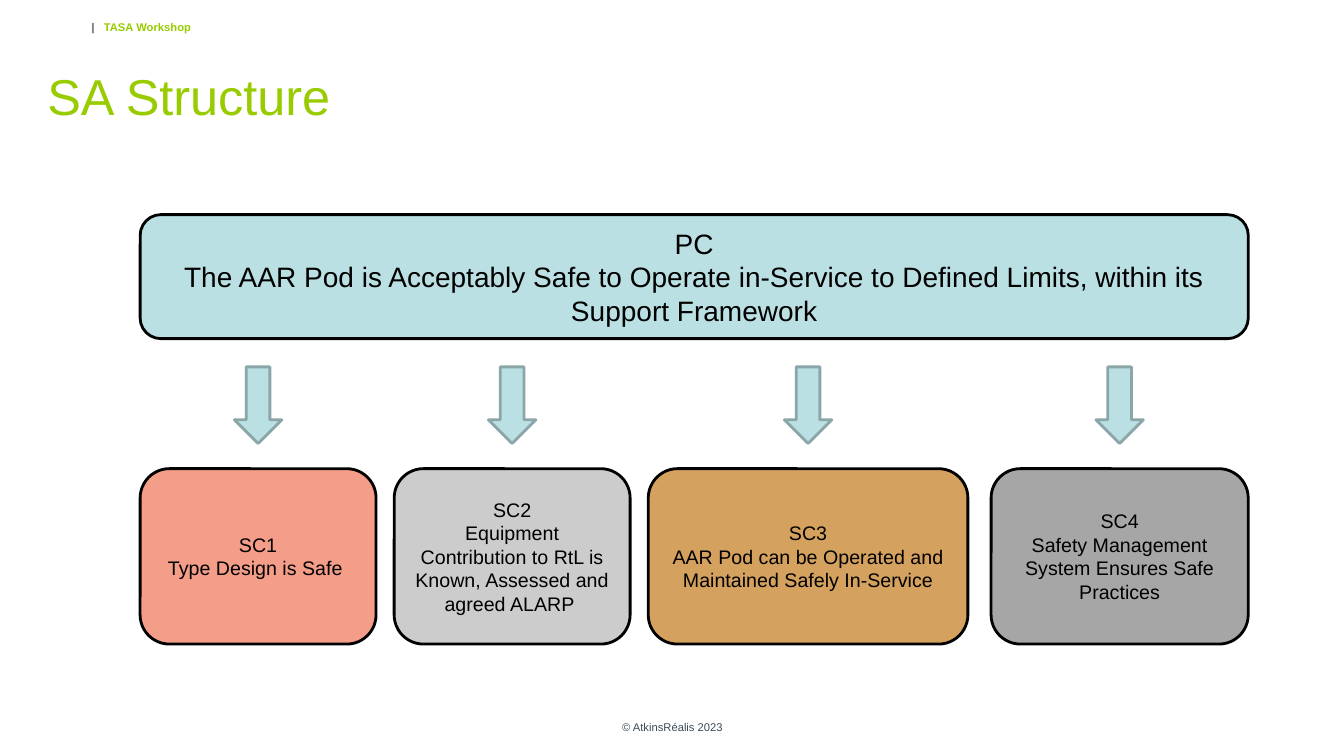
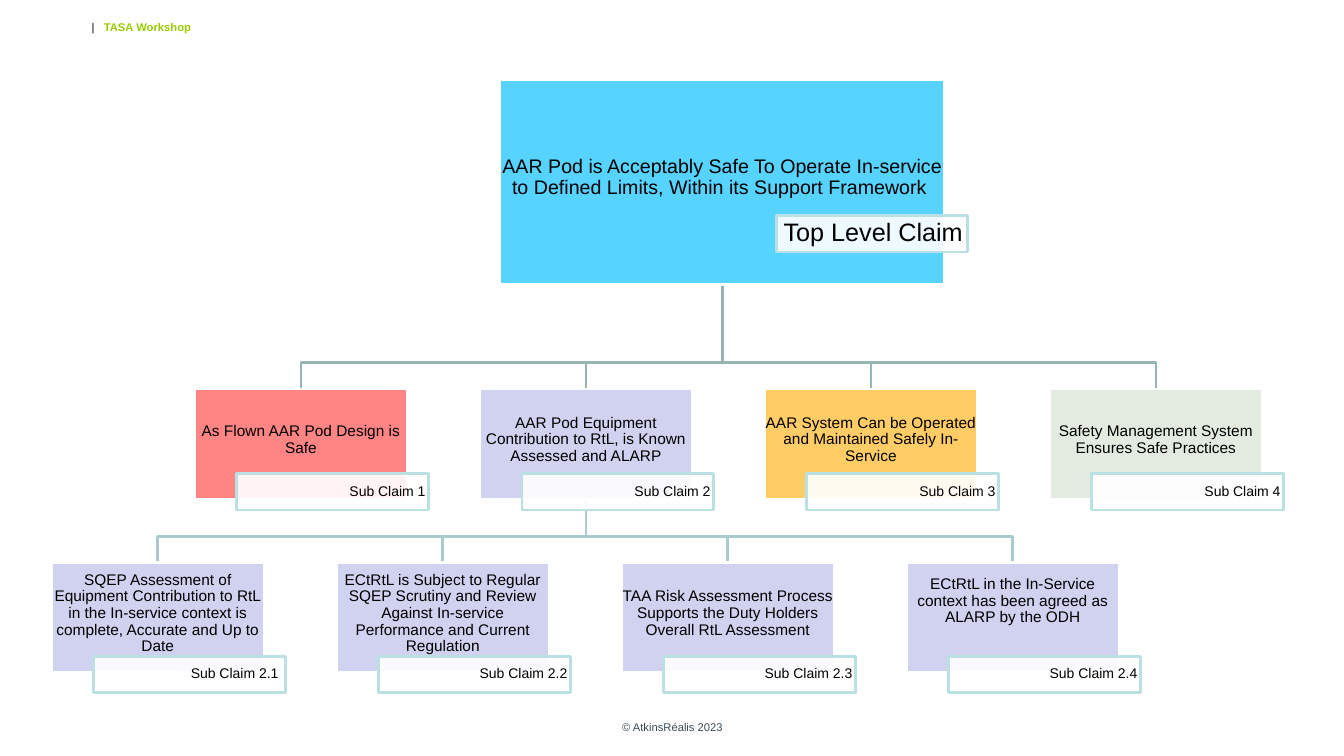
import dataclasses

import pptx
import pptx.dml.color
import pptx.enum.shapes
import pptx.enum.text
import pptx.oxml
import pptx.oxml.ns
import pptx.util

Inches = pptx.util.Inches
SHAPES = pptx.enum.shapes.MSO_SHAPE
ALIGN = pptx.enum.text.PP_ALIGN
ANCHOR = pptx.enum.text.MSO_ANCHOR


@dataclasses.dataclass(frozen=True)
class Theme:
    font: str = "Arial"
    black: str = "000000"
    white: str = "FFFFFF"
    green: str = "99CC00"
    slate: str = "394A58"
    teal: str = "BBE0E3"
    arrow_edge: str = "8AA6A8"
    upper_line: str = "96B3B6"
    lower_line: str = "AACBCE"
    salmon: str = "F49D88"
    silver: str = "CCCCCC"
    ochre: str = "D4A15E"
    grey: str = "A6A6A6"
    sky: str = "57D3FF"
    red: str = "FF8585"
    lilac: str = "D1D1F0"
    amber: str = "FFCC66"
    sage: str = "E3EBE1"
    title_size: int = 36
    claim_size: int = 20
    card_size: int = 14
    node_size: int = 11
    tag_size: int = 10
    top_tag_size: int = 18
    small_size: int = 8
    line_width: int = 2


THEME = Theme()

CARDS = [
    (1.39, 2.34, THEME.salmon, "SC1\nType Design is Safe "),
    (3.91, 2.34, THEME.silver,
     "SC2\nEquipment Contribution to RtL is Known, Assessed and agreed ALARP "),
    (6.43, 3.17, THEME.ochre,
     "SC3\nAAR Pod can be Operated and Maintained Safely In-Service"),
    (9.83, 2.55, THEME.grey,
     "SC4\nSafety Management System Ensures Safe Practices"),
]

# Fill, claim, tag and extra bottom inset of each node
SUB_CLAIMS = [
    (THEME.red, "As Flown AAR Pod Design is Safe", "Sub Claim 1", 0),
    (THEME.lilac,
     "AAR Pod Equipment Contribution to RtL, is Known Assessed and ALARP",
     "Sub Claim 2", 0),
    (THEME.amber,
     "AAR System Can be Operated and Maintained Safely In-Service",
     "Sub Claim 3", 0),
    (THEME.sage, "Safety Management System Ensures Safe Practices",
     "Sub Claim 4", 0),
]
LOWER_CLAIMS = [
    (THEME.lilac,
     "SQEP Assessment of Equipment Contribution to RtL in the In-service "
     "context is complete, Accurate and Up to Date", "Sub Claim 2.1 ", 0),
    (THEME.lilac,
     "ECtRtL is Subject to Regular SQEP Scrutiny and Review Against "
     "In-service Performance and Current Regulation", "Sub Claim 2.2", 0),
    (THEME.lilac,
     "TAA Risk Assessment Process Supports the Duty Holders Overall RtL "
     "Assessment", "Sub Claim 2.3", 0),
    (THEME.lilac,
     "ECtRtL in the In-Service context has been agreed as ALARP by the ODH",
     "Sub Claim 2.4", 0.24),
]

NODE_WIDTH, NODE_HEIGHT = 2.11, 1.09
NODE_PITCH = 8.48 / 3
TAG_WIDTH, TAG_HEIGHT = 1.9, 0.36


def rgb(color):
    return pptx.dml.color.RGBColor.from_string(color)


def style_font(font, size, color, bold=False):
    font.name = THEME.font
    font.size = pptx.util.Pt(size)
    font.bold = bold
    font.color.rgb = rgb(color)


def set_insets(frame, left, top, right, bottom):
    frame.margin_left, frame.margin_top = Inches(left), Inches(top)
    frame.margin_right, frame.margin_bottom = Inches(right), Inches(bottom)


def fill_text(frame, text, size, color=THEME.black, align=ALIGN.CENTER,
              anchor=ANCHOR.MIDDLE, spacing=1.0):
    frame.text = text
    frame.word_wrap = True
    frame.vertical_anchor = anchor
    for para in frame.paragraphs:
        para.alignment = align
        para.line_spacing = spacing
        for span in para.runs:
            style_font(span.font, size, color)


def set_outline(shape, color):
    shape.shadow.inherit = False
    shape.line.color.rgb = rgb(color)
    shape.line.width = pptx.util.Pt(THEME.line_width)


def add_box(page, kind, area, fill, edge):
    box = page.shapes.add_shape(kind, *map(Inches, area))
    set_outline(box, edge)
    box.fill.solid()
    box.fill.fore_color.rgb = rgb(fill)
    return box


def add_card(page, area, fill, text, size):
    card = add_box(page, SHAPES.ROUNDED_RECTANGLE, area, fill, THEME.black)
    fill_text(card.text_frame, text, size)


def add_title(page, text):
    title = page.shapes.title
    title.left, title.top = Inches(0.37), Inches(0.59)
    title.width, title.height = Inches(12.08), Inches(0.71)
    fill_text(title.text_frame, text, THEME.title_size, THEME.green,
              ALIGN.LEFT, ANCHOR.BOTTOM)


def add_node(page, area, fill, text, size, lift=0):
    """Add a claim box; lift raises its text by widening the bottom inset."""
    node = add_box(page, SHAPES.RECTANGLE, area, fill, THEME.white)
    set_insets(node.text_frame, 0, 0.01, 0, 0.09 + lift)
    fill_text(node.text_frame, text, size, spacing=0.9)


def add_tag(page, left, top, text, size, inset):
    tag = add_box(page, SHAPES.RECTANGLE, (left, top, TAG_WIDTH, TAG_HEIGHT),
                  THEME.white, THEME.teal)
    solid = tag.element.spPr.find(pptx.oxml.ns.qn("a:solidFill"))
    solid[0].append(pptx.oxml.parse_xml(
        f'<a:alpha {pptx.oxml.ns.nsdecls("a")} val="90000"/>'))
    set_insets(tag.text_frame, inset, 0.01, inset, 0.01)
    fill_text(tag.text_frame, text, size, align=ALIGN.RIGHT, spacing=0.9)


def add_branches(page, trunk, top, bus, bottom, centers, color):
    """Join a parent to each child by a line with two bends at the bus."""
    for center in centers:
        outline = page.shapes.build_freeform(Inches(trunk), Inches(top))
        bends = [(trunk, bus), (center, bus), (center, bottom)]
        outline.add_line_segments(
            [(Inches(x), Inches(y)) for x, y in bends], close=False)
        branch = outline.convert_to_shape()
        branch.fill.background()
        set_outline(branch, color)


def node_lefts(first):
    return [first + index * NODE_PITCH for index in range(4)]


def node_centers(first):
    return [left + NODE_WIDTH / 2 for left in node_lefts(first)]


def add_node_row(page, first, top, tag_top, claims):
    for left, (fill, text, tag, lift) in zip(node_lefts(first), claims):
        add_node(page, (left, top, NODE_WIDTH, NODE_HEIGHT), fill, text,
                 THEME.node_size, lift)
        add_tag(page, left + 0.42, tag_top, tag, THEME.tag_size, 0.03)


def move_to_master(deck, box):
    master = deck.slide_master
    box.element.nvSpPr.cNvPr.set("id", str(len(master.shapes) + 2))
    master.shapes.element.append(box.element)


def add_header_and_footer(deck, page):
    """Put the running header and the copyright line on the slide master."""
    header = page.shapes.add_textbox(
        Inches(0.91), Inches(0.2), Inches(10.26), Inches(0.34))
    header.text_frame.word_wrap = True
    set_insets(header.text_frame, 0, 0, 0, 0)
    para = header.text_frame.paragraphs[0]
    para._p.get_or_add_pPr().append(pptx.oxml.parse_xml(
        f'<a:tabLst {pptx.oxml.ns.nsdecls("a")}>'
        f'<a:tab pos="{Inches(0.12)}" algn="l"/></a:tabLst>'))
    for text, color, bold in (("|\t", THEME.black, False),
                              ("TASA Workshop", THEME.green, True)):
        span = para.add_run()
        span.text = text
        style_font(span.font, THEME.small_size, color, bold)

    footer = page.shapes.add_textbox(
        Inches(4.56), Inches(7.01), Inches(4.22), Inches(0.4))
    fill_text(footer.text_frame, "© AtkinsRéalis 2023", THEME.small_size,
              THEME.slate)
    for box in (header, footer):
        move_to_master(deck, box)


def build_structure(page):
    add_title(page, "SA Structure")
    add_card(page, (1.39, 2.13, 10.99, 1.23), THEME.teal,
             "PC\nThe AAR Pod is Acceptably Safe to Operate in-Service to "
             "Defined Limits, within its Support Framework", THEME.claim_size)
    arrow_width = 0.47
    for left, width, fill, text in CARDS:
        add_card(page, (left, 4.65, width, 1.74), fill, text, THEME.card_size)
        add_box(page, SHAPES.DOWN_ARROW,
                (left + (width - arrow_width) / 2, 3.64, arrow_width, 0.76),
                THEME.teal, THEME.arrow_edge)


def build_claim_tree(page):
    upper_left, upper_top = 1.93, 3.86
    lower_left, lower_top = 0.51, 5.58
    upper_centers = node_centers(upper_left)
    add_branches(page, 7.17, 2.82, 3.6, upper_top, upper_centers,
                 THEME.upper_line)
    add_branches(page, upper_centers[1], upper_top + NODE_HEIGHT, 5.32,
                 lower_top, node_centers(lower_left), THEME.lower_line)
    add_node(page, (4.96, 0.79, 4.41, 2.03), THEME.sky,
             "AAR Pod is Acceptably Safe To Operate In-service to Defined "
             "Limits, Within its Support Framework ", THEME.card_size)
    add_tag(page, 7.7, 2.14, "Top Level Claim", THEME.top_tag_size, 0.05)
    add_node_row(page, upper_left, upper_top, 4.7, SUB_CLAIMS)
    add_node_row(page, lower_left, lower_top, 6.51, LOWER_CLAIMS)


def main():
    deck = pptx.Presentation()
    deck.slide_width, deck.slide_height = Inches(13.33), Inches(7.5)
    title_only, blank = deck.slide_layouts[5], deck.slide_layouts[6]
    structure = deck.slides.add_slide(title_only)
    add_header_and_footer(deck, structure)
    build_structure(structure)
    build_claim_tree(deck.slides.add_slide(blank))
    deck.save("out.pptx")


if __name__ == "__main__":
    main()
